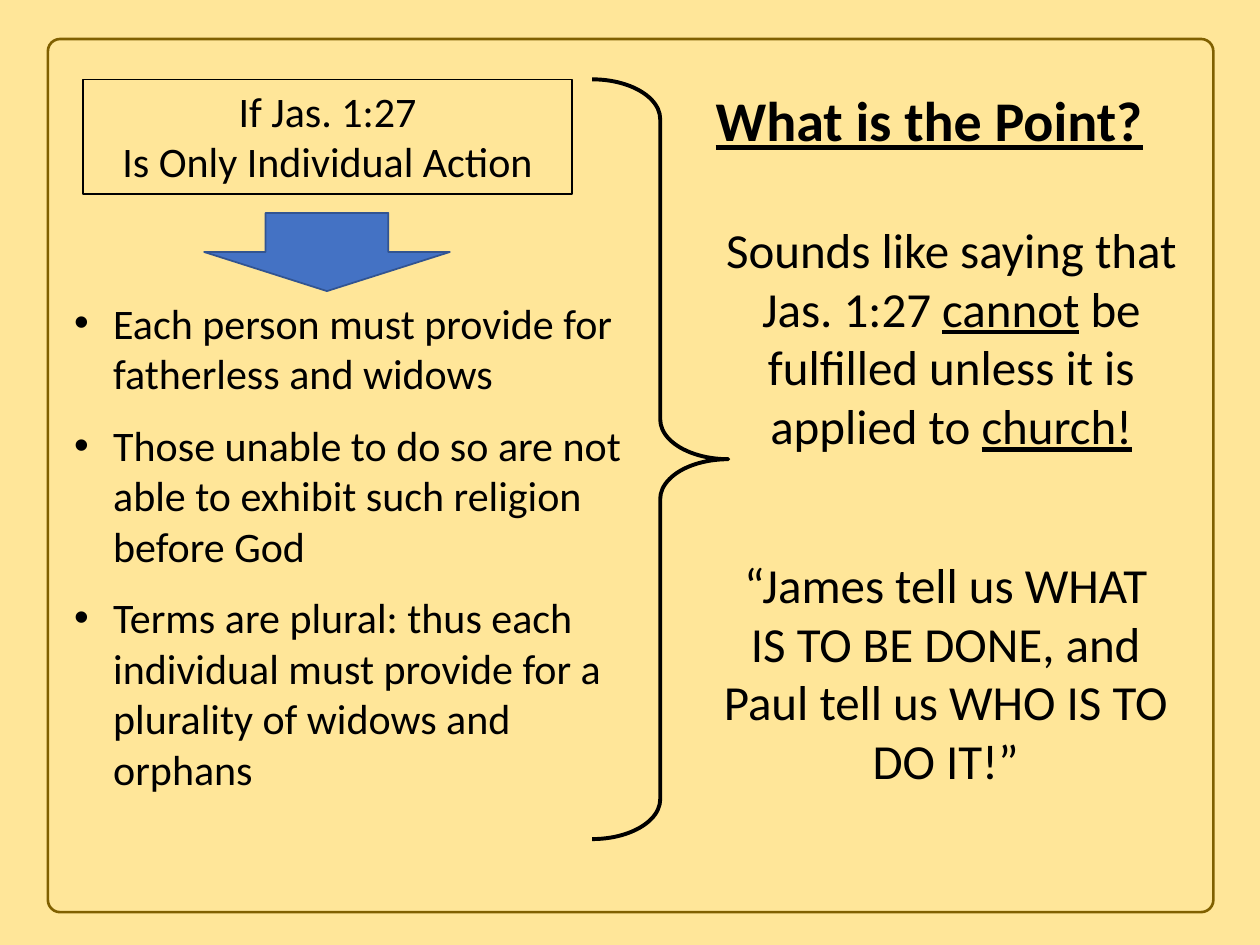
"""Build the slide on whether Jas. 1:27 is only individual action."""
from dataclasses import dataclass

from lxml import etree
from pptx import Presentation
from pptx.dml.color import RGBColor
from pptx.enum.shapes import MSO_SHAPE
from pptx.enum.text import MSO_ANCHOR, MSO_AUTO_SIZE, PP_ALIGN
from pptx.oxml.ns import qn
from pptx.util import Inches, Pt

ROUND = MSO_SHAPE.ROUNDED_RECTANGLE
RECT = MSO_SHAPE.RECTANGLE
ARROW = MSO_SHAPE.DOWN_ARROW
BRACE = MSO_SHAPE.RIGHT_BRACE
TOP = MSO_ANCHOR.TOP
FIXED = MSO_AUTO_SIZE.NONE
LEFT, CENTER = PP_ALIGN.LEFT, PP_ALIGN.CENTER


@dataclass(frozen=True)
class Theme:
    """Colours, font and type sizes of the slide."""
    font: str = "Calibri"
    back: str = "FFE699"
    frame: str = "806000"
    ink: str = "000000"
    arrow: str = "4472C4"
    edge: str = "325491"
    title: int = 32
    quote: int = 28
    body: int = 24
    gap: float = 12.2


class Deck:
    """Style and current slide, with a method for each kind of element."""

    def __init__(self, show, theme):
        self.theme = theme
        self.slide = show.slides.add_slide(show.slide_layouts[5])
        fill = self.slide.background.fill
        fill.solid()
        fill.fore_color.rgb = RGBColor.from_string(theme.back)

    def style(self, para, size, align=CENTER, bold=False):
        """Set the font and alignment of one paragraph."""
        font = para.font
        font.name, font.size, font.bold = self.theme.font, Pt(size), bold
        font.color.rgb = RGBColor.from_string(self.theme.ink)
        para.alignment = align

    def label(self, shape, lines, size, align=CENTER, bold=False):
        """Fill a shape with paragraphs given as lists of (text, underline)."""
        frame = shape.text_frame
        frame.word_wrap, frame.auto_size = True, FIXED
        frame.vertical_anchor = TOP
        for num, runs in enumerate(lines):
            para = frame.add_paragraph() if num else frame.paragraphs[0]
            self.style(para, size, align, bold)
            for text, under in runs:
                run = para.add_run()
                run.text = text
                if under:
                    run.font.underline = True
        return frame

    def title(self, box, text):
        """Place and fill the title."""
        shape = self.slide.shapes.title
        shape.left, shape.top, shape.width, shape.height = map(Inches, box)
        self.label(shape, [[(text, True)]], self.theme.title, bold=True)

    def shape(self, kind, box, line, width, fill=None, adjust=()):
        """Add a preset shape."""
        shape = self.slide.shapes.add_shape(kind, *map(Inches, box))
        shape.shadow.inherit = False
        if fill:
            shape.fill.solid()
            shape.fill.fore_color.rgb = RGBColor.from_string(fill)
        else:
            shape.fill.background()
        shape.line.color.rgb = RGBColor.from_string(line)
        shape.line.width = Pt(width)
        for num, value in enumerate(adjust):
            shape.adjustments[num] = value
        return shape

    def text(self, box, lines, size, align=CENTER):
        """Add a text box."""
        shape = self.slide.shapes.add_textbox(*map(Inches, box))
        return self.label(shape, lines, size, align)

    def bullets(self, box, items):
        """Add a bulleted list with a hanging indent."""
        lines = [[(item, False)] for item in items]
        frame = self.text(box, lines, self.theme.body, LEFT)
        for num, para in enumerate(frame.paragraphs):
            para.space_before = Pt(self.theme.gap if num else 0)
            props = para._p.get_or_add_pPr()
            props.set("marL", str(Inches(0.31)))
            props.set("indent", str(-Inches(0.31)))
            font = etree.Element(qn("a:buFont"), typeface="Arial")
            mark = etree.Element(qn("a:buChar"), char="•")
            base = props.find(qn("a:defRPr"))
            base.addprevious(font)
            base.addprevious(mark)


def main():
    """Build and save the slide."""
    show = Presentation()
    show.slide_width, show.slide_height = Inches(10), Inches(7.5)
    theme = Theme()
    deck = Deck(show, theme)

    deck.shape(ROUND, (0.38, 0.31, 9.25, 6.93), theme.frame, 1.5,
               adjust=(0.014,))
    claim = deck.shape(RECT, (0.66, 0.63, 3.88, 0.91), theme.ink, 0.75)
    deck.label(claim, [[("If Jas. 1:27", False)],
                       [("Is Only Individual Action", False)]], theme.body)
    deck.shape(ARROW, (1.62, 1.69, 1.95, 0.62), theme.edge, 1, theme.arrow)
    deck.bullets((0.49, 2.31, 4.71, 4.07), [
        "Each person must provide for fatherless and widows",
        "Those unable to do so are not able to exhibit such religion "
        "before God",
        "Terms are plural: thus each individual must provide for a "
        "plurality of widows and orphans",
    ])
    deck.shape(BRACE, (4.7, 0.63, 1.08, 6.03), theme.ink, 2.25,
               adjust=(0.293, 0.5))

    deck.title((5.51, 0.63, 3.73, 0.64), "What is the Point?")
    deck.text((5.51, 1.69, 4.08, 1.99), [[
        ("Sounds like saying that Jas. 1:27 ", False),
        ("cannot", True),
        (" be fulfilled unless it is applied to ", False),
        ("church!", True),
    ]], theme.quote)
    deck.text((5.64, 4.35, 3.73, 1.99), [[
        ("“James tell us WHAT IS TO BE DONE, and Paul tell us "
         "WHO IS TO DO IT!”", False),
    ]], theme.quote)
    show.save("out.pptx")


if __name__ == "__main__":
    main()
